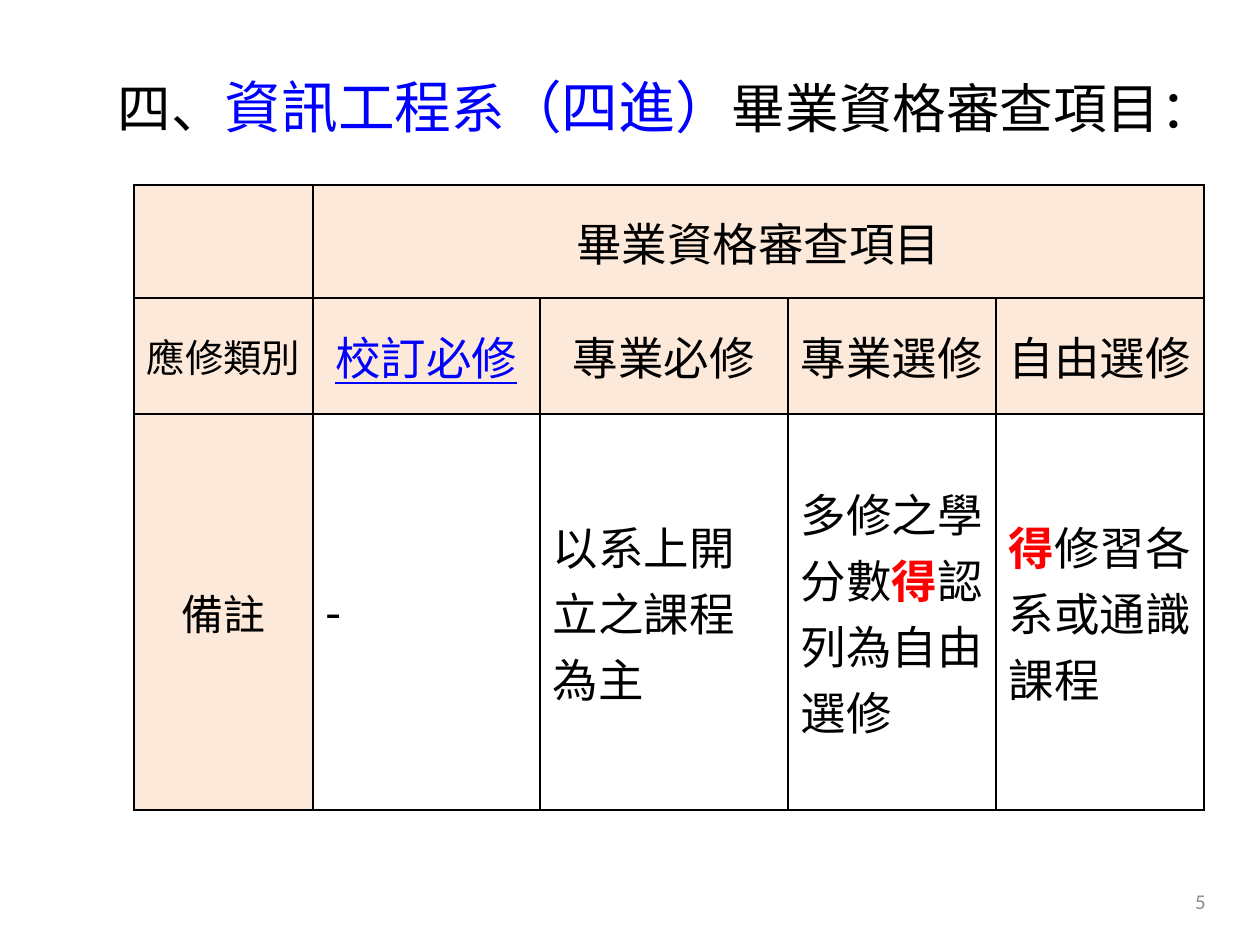
from dataclasses import dataclass

from lxml import etree
from pptx import Presentation
from pptx.dml.color import RGBColor
from pptx.enum.text import MSO_ANCHOR, MSO_AUTO_SIZE, PP_ALIGN
from pptx.oxml.ns import qn
from pptx.util import Emu, Pt

LEFT, CENTER, RIGHT = PP_ALIGN.LEFT, PP_ALIGN.CENTER, PP_ALIGN.RIGHT
MIDDLE = MSO_ANCHOR.MIDDLE
NO_FIT = MSO_AUTO_SIZE.NONE
PX_PER_INCH = 126


@dataclass(frozen=True)
class Theme:
    black: str = "000000"
    blue: str = "0000FF"
    red: str = "FF0000"
    grey: str = "8C8C8C"
    peach: str = "FDE9D9"
    title_font: str = "Noto Sans CJK JP"
    table_font: str = "Times New Roman"
    number_font: str = "Calibri"
    title: float = 30.6
    title_large: float = 32.4
    cell: int = 26
    label: int = 24
    label_small: int = 22
    number: int = 12
    thin: int = 1
    thick: float = 1.5


T = Theme()


def px(n):
    return Emu(round(n * 914400 / PX_PER_INCH))


def style(font, name, size, color):
    font.name = name
    font.size = Pt(size)
    font.color.rgb = RGBColor.from_string(color)


def add_title(s, box):
    sp = s.shapes.title
    sp.left, sp.top, sp.width, sp.height = map(px, box)
    tf = sp.text_frame
    tf.auto_size = NO_FIT
    tf.word_wrap = True
    tf.vertical_anchor = MIDDLE
    tf.margin_right = 0
    p = tf.paragraphs[0]
    p.alignment = LEFT
    for text, size, color in (
        ("四、", T.title, T.black),
        ("資訊工程", T.title_large, T.blue),
        ("系", T.title, T.blue),
        ("（四進）", T.title_large, T.blue),
        ("畢業資格審查項目：", T.title, T.black),
    ):
        r = p.add_run()
        r.text = text
        style(r.font, T.title_font, size, color)
        ea = etree.SubElement(r._r.get_or_add_rPr(), qn("a:ea"))
        ea.set("typeface", T.title_font)


def set_borders(cell, widths):
    tcPr = cell._tc.get_or_add_tcPr()
    for i, (side, width) in enumerate(zip("LRTB", widths)):
        ln = etree.Element(qn(f"a:ln{side}"), w=str(Pt(width)))
        fill = etree.SubElement(ln, qn("a:solidFill"))
        etree.SubElement(fill, qn("a:srgbClr"), val=T.black)
        tcPr.insert(i, ln)


def fill_cell(cell, runs, size, align, shaded):
    cell.vertical_anchor = MIDDLE
    if shaded:
        cell.fill.solid()
        cell.fill.fore_color.rgb = RGBColor.from_string(T.peach)
    else:
        cell.fill.background()
    p = cell.text_frame.paragraphs[0]
    p.alignment = align
    for text, color in runs:
        r = p.add_run()
        r.text = text
        style(r.font, T.table_font, size, color)
        r.font.bold = color == T.red
        r.font.underline = color == T.blue


def add_requirements(s, box, col_widths, row_heights):
    rows = (
        ((), (("畢業資格審查項目", T.black),), (), (), ()),
        (
            (("應修類別", T.black),),
            (("校訂必修", T.blue),),
            (("專業必修", T.black),),
            (("專業選修", T.black),),
            (("自由選修", T.black),),
        ),
        (
            (("備註", T.black),),
            (("-", T.black),),
            (("以系上開立之課程為主", T.black),),
            (("多修之學分數", T.black), ("得", T.red), ("認列為自由選修", T.black)),
            (("得", T.red), ("修習各系或通識課程", T.black)),
        ),
    )
    label_sizes = (T.cell, T.label_small, T.label)
    last_row, last_col = len(row_heights) - 1, len(col_widths) - 1
    table = s.shapes.add_table(last_row + 1, last_col + 1, *map(px, box)).table
    table.first_row = table.horz_banding = False
    for col, width in zip(table.columns, col_widths):
        col.width = px(width)
    for row, height in zip(table.rows, row_heights):
        row.height = px(height)
    table.cell(0, 1).merge(table.cell(0, last_col))
    for i, row in enumerate(rows):
        for j, runs in enumerate(row):
            cell = table.cell(i, j)
            shaded = i < last_row or j == 0
            size = label_sizes[i] if j == 0 else T.cell
            fill_cell(cell, runs, size, CENTER if shaded else LEFT, shaded)
            right = j + (cell.span_width if cell.is_merge_origin else 1) - 1
            outer = (j == 0, right == last_col, i == 0, i == last_row)
            set_borders(cell, [T.thick if edge else T.thin for edge in outer])


def add_slide_number(s, box):
    tf = s.shapes.add_textbox(*map(px, box)).text_frame
    tf.word_wrap = True
    tf.vertical_anchor = MIDDLE
    p = tf.paragraphs[0]
    p.text = "5"
    p.alignment = RIGHT
    style(p.font, T.number_font, T.number, T.grey)


def main():
    prs = Presentation()
    prs.slide_width, prs.slide_height = px(1260), px(945)
    s = prs.slides.add_slide(prs.slide_layouts[5])
    add_slide_number(s, (924, 876, 294, 50))
    add_requirements(s, (134, 185, 1071, 625), (179, 227, 248, 208, 208), (113, 116, 396))
    add_title(s, (105, 37, 1113, 137))
    prs.save("out.pptx")


if __name__ == "__main__":
    main()
